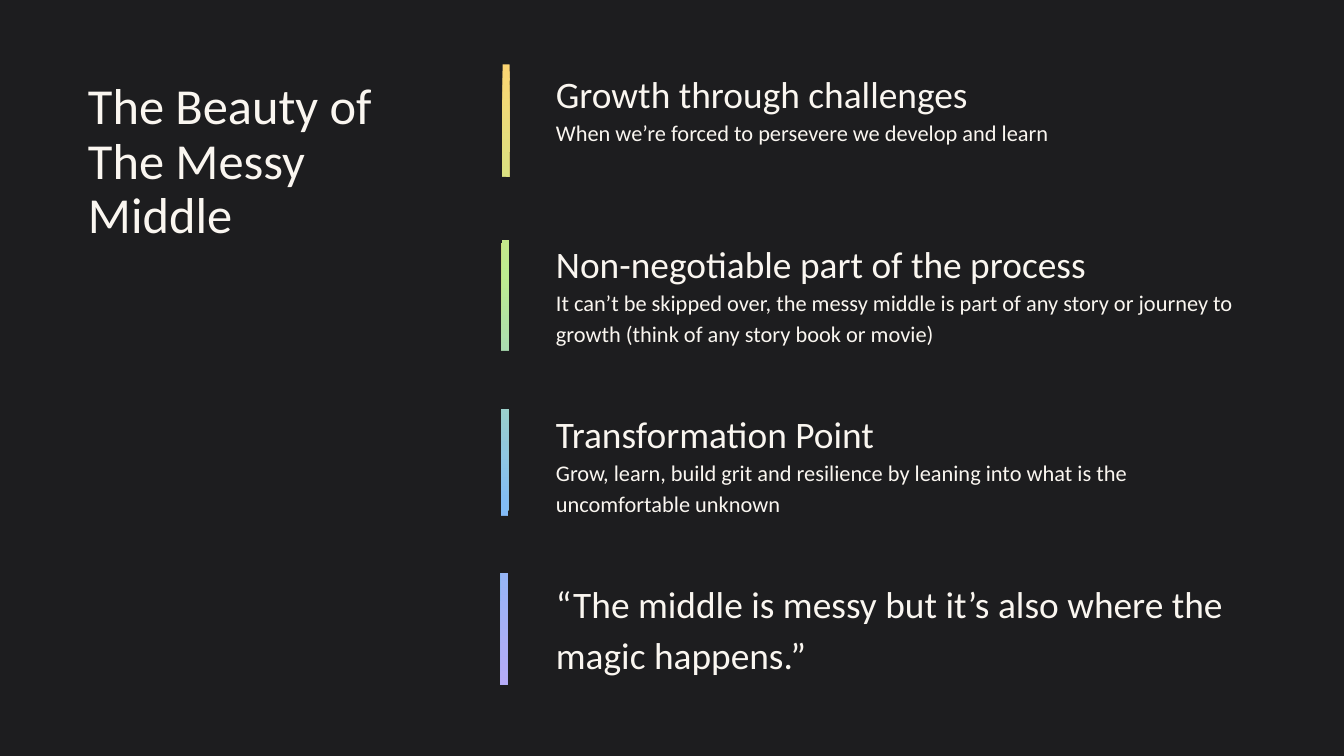
from dataclasses import dataclass

from lxml import etree
from pptx import Presentation
from pptx import util as u
from pptx.dml.color import RGBColor
from pptx.enum import shapes, text
from pptx.oxml.ns import qn

EMU_PER_PX = 914400 / 134.4
SLIDE_SIZE = (1344, 756)


@dataclass(frozen=True)
class Theme:
    font: str = "Calibri"
    background: str = "1D1D1F"
    ink: str = "FAF6F0"
    rainbow: tuple = ((0, "FBD572"), (34, "BDEC90"), (71, "82BCF6"), (100, "B6ABF7"))
    title_size: int = 27
    heading_size: int = 20
    body_size: int = 12


def px(length):
    return u.Emu(round(length * EMU_PER_PX))


class Painter:
    def __init__(self, slide, theme):
        self.slide = slide
        self.theme = theme
        self.fill_solid(slide.background.fill)

    def fill_solid(self, fill):
        fill.solid()
        fill.fore_color.rgb = RGBColor.from_string(self.theme.background)

    def text_block(self, box, lines, spacing, insets, indent=0,
                   anchor=text.MSO_ANCHOR.TOP):
        """Write (wording, size) lines; insets run left, top, right, bottom."""
        frame = self.slide.shapes.add_textbox(*map(px, box)).text_frame
        frame.word_wrap = True
        frame.vertical_anchor = anchor
        (frame.margin_left, frame.margin_top,
         frame.margin_right, frame.margin_bottom) = map(px, insets)
        for i, (wording, size) in enumerate(lines):
            paragraph = frame.add_paragraph() if i else frame.paragraphs[0]
            paragraph.text = wording
            paragraph.line_spacing = spacing
            paragraph.font.name = self.theme.font
            paragraph.font.size = u.Pt(size)
            paragraph.font.color.rgb = RGBColor.from_string(self.theme.ink)
            if indent:
                paragraph._p.get_or_add_pPr().set("marL", str(px(indent)))

    def rectangle(self, box, rotation):
        rect = self.slide.shapes.add_shape(shapes.MSO_SHAPE.RECTANGLE, *map(px, box))
        rect.rotation = rotation
        rect.shadow.inherit = False
        rect.line.fill.background()
        return rect

    def rainbow_bar(self, box, rotation):
        bar = self.rectangle(box, rotation)
        bar.fill.gradient()
        bar.fill.gradient_angle = 0
        stops = bar._element.spPr.find(f".//{qn('a:gsLst')}")
        for stop in list(stops):
            stops.remove(stop)
        for percent, color in self.theme.rainbow:
            stop = etree.SubElement(stops, qn("a:gs"), pos=str(percent * 1000))
            etree.SubElement(stop, qn("a:srgbClr"), val=color)

    def gap(self, box, rotation):
        """Cover part of the bar with the background colour."""
        self.fill_solid(self.rectangle(box, rotation).fill)


POINTS = [
    ("Growth through challenges",
     "When we’re forced to persevere we develop and learn"),
    ("Non-negotiable part of the process",
     "It can’t be skipped over, the messy middle is part of any story or "
     "journey to growth (think of any story book or movie)"),
    ("Transformation Point",
     "Grow, learn, build grit and resilience by leaning into what is the "
     "uncomfortable unknown"),
    ("“The middle is messy but it’s also where the magic happens.”",),
]
POINT_TOP, POINT_STEP = 64, 170
GAPS = [(458, 177, 90, 63), (458, 351, 90, 58), (461, 516, 90, 57)]
TILT = 0.2


def main():
    deck = Presentation()
    deck.slide_width, deck.slide_height = map(px, SLIDE_SIZE)
    theme = Theme()
    painter = Painter(deck.slides.add_slide(deck.slide_layouts[6]), theme)

    painter.text_block((78, 110, 382, 106),
                       [("The Beauty of The Messy Middle", theme.title_size)],
                       spacing=0.9, insets=(10, 5, 10, 5),
                       anchor=text.MSO_ANCHOR.MIDDLE)
    for row, point in enumerate(POINTS):
        painter.text_block((551, POINT_TOP + row * POINT_STEP, 728, 128),
                           list(zip(point, (theme.heading_size, theme.body_size))),
                           spacing=1.15, insets=(0, 0, 13, 0), indent=5)

    painter.rainbow_bar((195, 371, 620, 7), 90 + TILT)
    for box in GAPS:
        painter.gap(box, TILT)

    deck.save("out.pptx")


if __name__ == "__main__":
    main()
